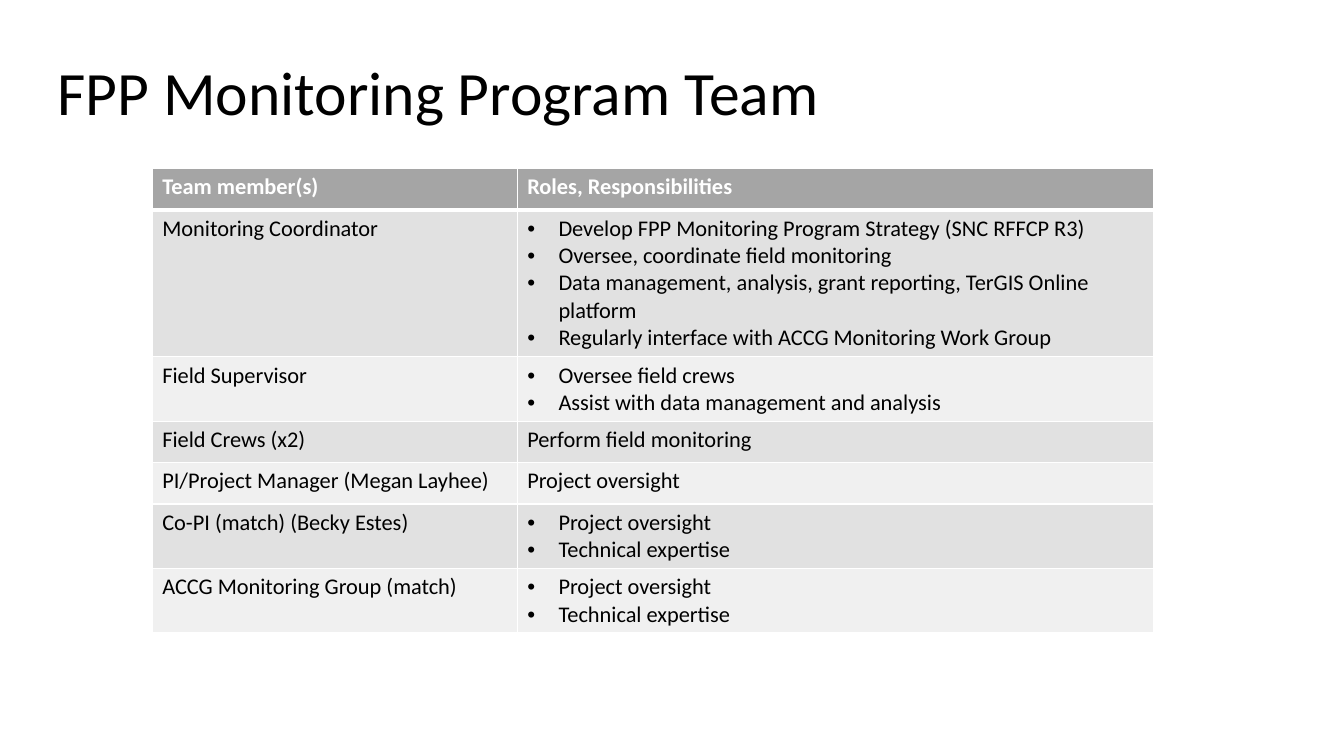
from lxml.etree import SubElement
from pptx import Presentation
from pptx.dml.color import RGBColor
from pptx.enum.text import MSO_ANCHOR
from pptx.oxml.ns import qn
from pptx.util import Inches, Pt

COLORS = {
    "title": "000000",
    "body": "000000",
    "header_text": "FFFFFF",
    "header": "A5A5A5",
    "dark_band": "E1E1E1",
    "light_band": "F0F0F0",
    "border": "FFFFFF",
}
FONT = "Calibri"
BULLET_INDENT = Inches(0.31)
COLUMN_WIDTHS = (3.62, 6.31)
HEADER = ("Team member(s)", ["Roles, Responsibilities"], 0.41)
TEAM = [
    (
        "Monitoring Coordinator",
        [
            "Develop FPP Monitoring Program Strategy (SNC RFFCP R3)",
            "Oversee, coordinate field monitoring",
            "Data management, analysis, grant reporting, TerGIS Online platform",
            "Regularly interface with ACCG Monitoring Work Group",
        ],
        1.46,
    ),
    (
        "Field Supervisor",
        ["Oversee field crews", "Assist with data management and analysis"],
        0.64,
    ),
    ("Field Crews (x2)", ["Perform field monitoring"], 0.41),
    ("PI/Project Manager (Megan Layhee)", ["Project oversight"], 0.41),
    ("Co-PI (match) (Becky Estes)", ["Project oversight", "Technical expertise"], 0.64),
    ("ACCG Monitoring Group (match)", ["Project oversight", "Technical expertise"], 0.64),
]


class TeamSlide:
    def __init__(self, deck):
        self.slide = deck.slides.add_slide(deck.slide_layouts[6])

    def style_text(self, paragraph, size, color, bold=False):
        for span in paragraph.runs:
            span.font.name = FONT
            span.font.size = Pt(size)
            span.font.bold = bold
            span.font.color.rgb = RGBColor.from_string(COLORS[color])

    def add_title(self, text, left, top, width, height):
        box = self.slide.shapes.add_textbox(
            Inches(left), Inches(top), Inches(width), Inches(height)
        )
        frame = box.text_frame
        frame.word_wrap = True
        frame.vertical_anchor = MSO_ANCHOR.MIDDLE
        frame.text = text
        frame.paragraphs[0].line_spacing = 0.9
        self.style_text(frame.paragraphs[0], 44, "title")

    def add_bullet(self, paragraph):
        properties = paragraph._p.get_or_add_pPr()
        properties.set("marL", str(BULLET_INDENT))
        properties.set("indent", str(-BULLET_INDENT))
        SubElement(properties, qn("a:buFont"), typeface="Arial")
        SubElement(properties, qn("a:buChar"), char="•")

    def set_borders(self, cell, top=1, bottom=1):
        """Draw the four cell borders; widths are in points."""
        properties = cell._tc.get_or_add_tcPr()
        for side, width in (("L", 1), ("R", 1), ("T", top), ("B", bottom)):
            line = SubElement(properties, qn(f"a:ln{side}"), w=str(Pt(width)))
            fill = SubElement(line, qn("a:solidFill"))
            SubElement(fill, qn("a:srgbClr"), val=COLORS["border"])

    def fill_cell(self, cell, lines, fill, color, bold):
        cell.fill.solid()
        cell.fill.fore_color.rgb = RGBColor.from_string(COLORS[fill])
        cell.text_frame.text = "\n".join(lines)
        for paragraph in cell.text_frame.paragraphs:
            if len(lines) > 1:
                self.add_bullet(paragraph)
            self.style_text(paragraph, 16, color, bold)

    def add_team_table(self, left, top):
        rows = [HEADER, *TEAM]
        table = self.slide.shapes.add_table(
            len(rows),
            len(COLUMN_WIDTHS),
            Inches(left),
            Inches(top),
            Inches(sum(COLUMN_WIDTHS)),
            Inches(sum(height for _, _, height in rows)),
        ).table
        for column, width in zip(table.columns, COLUMN_WIDTHS):
            column.width = Inches(width)
        for index, (member, roles, height) in enumerate(rows):
            table.rows[index].height = Inches(height)
            is_header = index == 0
            band = "dark_band" if index % 2 else "light_band"
            for cell, lines in zip(table.rows[index].cells, ([member], roles)):
                self.set_borders(
                    cell, top=3 if index == 1 else 1, bottom=3 if is_header else 1
                )
                self.fill_cell(
                    cell,
                    lines,
                    "header" if is_header else band,
                    "header_text" if is_header else "body",
                    is_header,
                )


def main():
    deck = Presentation()
    deck.slide_width = Inches(13.33)
    deck.slide_height = Inches(7.5)
    team_slide = TeamSlide(deck)
    team_slide.add_title("FPP Monitoring Program Team", 0.47, 0.22, 11.5, 1.45)
    team_slide.add_team_table(1.51, 1.67)
    deck.save("out.pptx")


if __name__ == "__main__":
    main()
